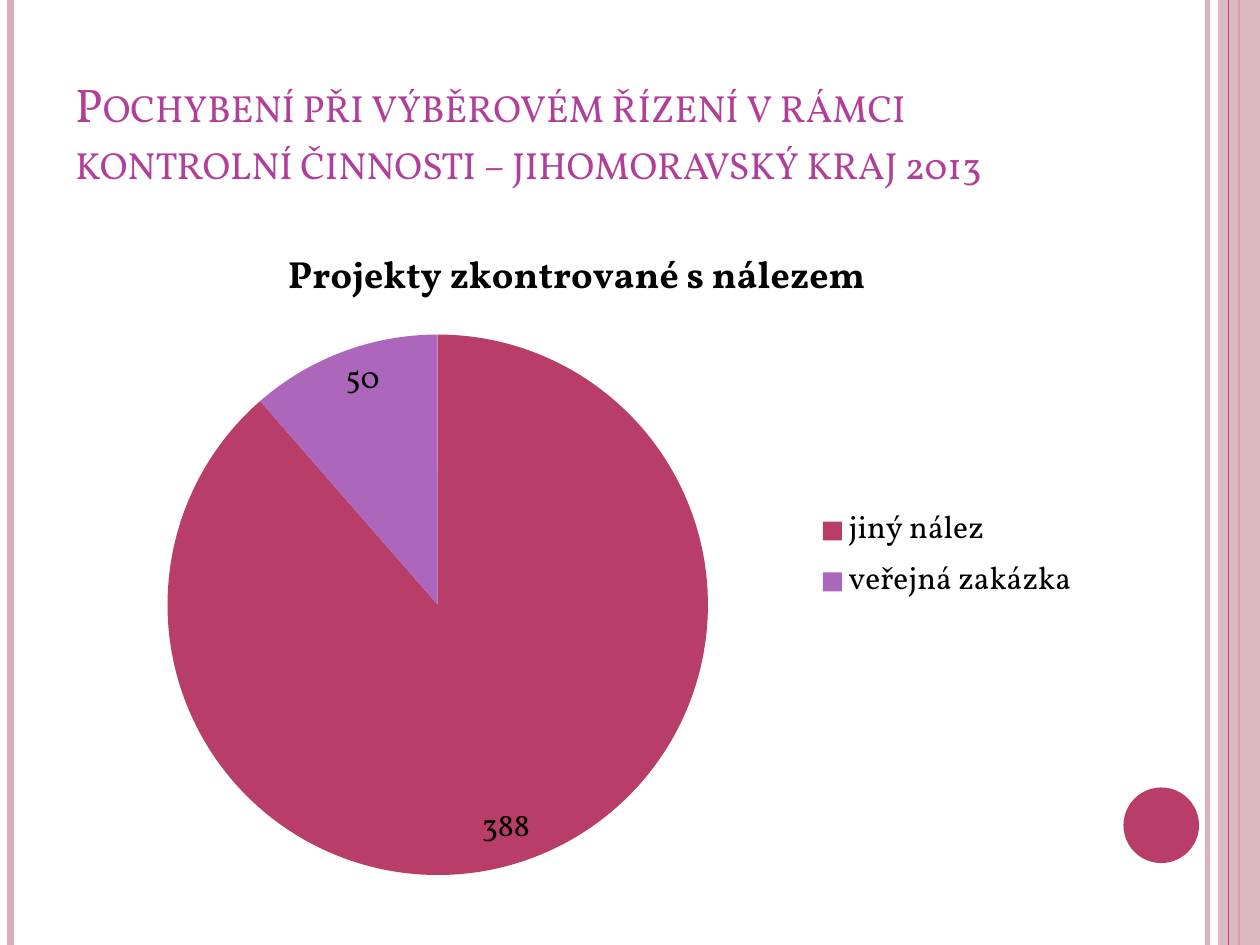
from lxml.etree import SubElement
from pptx import Presentation
from pptx.chart.data import CategoryChartData
from pptx.dml.color import RGBColor
from pptx.enum.chart import XL_CHART_TYPE, XL_LABEL_POSITION, XL_LEGEND_POSITION
from pptx.enum.shapes import MSO_CONNECTOR, MSO_SHAPE
from pptx.enum.text import MSO_ANCHOR
from pptx.oxml.ns import qn
from pptx.util import Pt

PX = 7620
WIDE, HIGH = 1200, 900
FACE = "Vollkorn"
COLORS = {
    "pale": "D8AFB9",
    "rose": "B83D68",
    "plum": "AC66BB",
    "title": "B13F9A",
    "text": "000000",
}


def color(name):
    return RGBColor.from_string(COLORS[name])


def scale(*box):
    return [n * PX for n in box]


def fade(part, share):
    tint = next(part._element.spPr.iter(qn("a:srgbClr")))
    SubElement(tint, qn("a:alpha"), val=str(share * 1000))


def style(font, size, name, bold=False):
    font.name = FACE
    font.size = Pt(size)
    font.bold = bold
    font.color.rgb = color(name)


def add_rule(slide, x, top, high, name, width):
    ends = scale(x, top, x, top + high)
    rule = slide.shapes.add_connector(MSO_CONNECTOR.STRAIGHT, *ends)
    rule.line.color.rgb = color(name)
    rule.line.width = Pt(width)
    SubElement(rule._element.spPr, qn("a:effectLst"))
    return rule


def add_solid(slide, kind, box, name):
    shape = slide.shapes.add_shape(kind, *scale(*box))
    shape.shadow.inherit = False
    shape.fill.solid()
    shape.fill.fore_color.rgb = color(name)
    shape.line.fill.background()
    return shape


def add_frame(slide, box):
    left, top, wide, high = box
    right = left + wide
    fade(add_rule(slide, right - 50, top, high, "pale", 3), 93)
    add_rule(slide, left + 10, top, high, "pale", 4.5)
    add_rule(slide, right - 20, top, high, "rose", 1.5)
    band = (right - 40, top, 40, high)
    fade(add_solid(slide, MSO_SHAPE.RECTANGLE, band, "pale"), 87)
    add_rule(slide, right - 30, top, high, "rose", 0.75)
    dot = (right - 130, top + high - 150, 72, 72)
    add_solid(slide, MSO_SHAPE.OVAL, dot, "rose")


def add_title(slide, box, text):
    frame = slide.shapes.add_textbox(*scale(*box)).text_frame
    frame.word_wrap = True
    frame.vertical_anchor = MSO_ANCHOR.BOTTOM
    run = frame.paragraphs[0].add_run()
    run.text = text
    style(run.font, 27, "title")
    run.font._element.set("cap", "small")


def add_pie(slide, box, title, parts):
    data = CategoryChartData()
    data.categories = [label for label, _, _ in parts]
    data.add_series(title, [value for _, value, _ in parts])
    chart = slide.shapes.add_chart(XL_CHART_TYPE.PIE, *scale(*box), data).chart
    style(chart.font, 18, "text")

    chart.has_title = True
    head = chart.chart_title.text_frame
    head.text = title
    style(head.paragraphs[0].runs[0].font, 21.6, "text", True)

    chart.has_legend = True
    chart.legend.position = XL_LEGEND_POSITION.RIGHT
    chart.legend.include_in_layout = False

    plot = chart.plots[0]
    plot.vary_by_categories = True
    plot.has_data_labels = True
    plot.data_labels.show_value = True
    plot.data_labels.show_percentage = False
    plot.data_labels.position = XL_LABEL_POSITION.INSIDE_END
    style(plot.data_labels.font, 18, "text")
    for i, (_, _, name) in enumerate(parts):
        fill = plot.series[0].points[i].format.fill
        fill.solid()
        fill.fore_color.rgb = color(name)


def main():
    deck = Presentation()
    deck.slide_width, deck.slide_height = scale(WIDE, HIGH)
    slide = deck.slides.add_slide(deck.slide_layouts[6])
    add_frame(slide, (0, 0, WIDE, HIGH))
    add_title(
        slide,
        (60, 36, 980, 150),
        "Pochybení při výběrovém řízení v rámci kontrolní činnosti – jihomoravský kraj 2013",
    )
    parts = [("jiný nález", 388, "rose"), ("veřejná zakázka", 50, "plum")]
    add_pie(slide, (60, 210, 980, 640), "Projekty zkontrované s nálezem", parts)
    deck.save("out.pptx")


if __name__ == "__main__":
    main()
